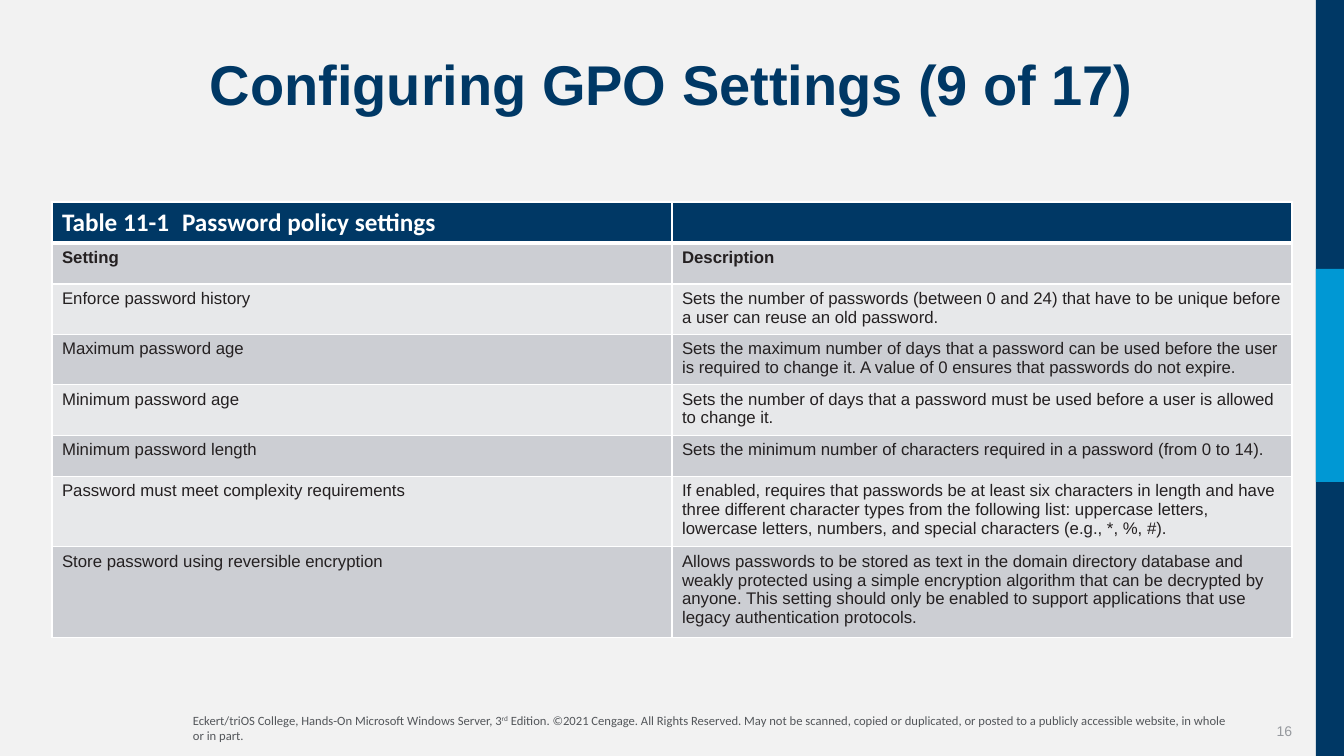
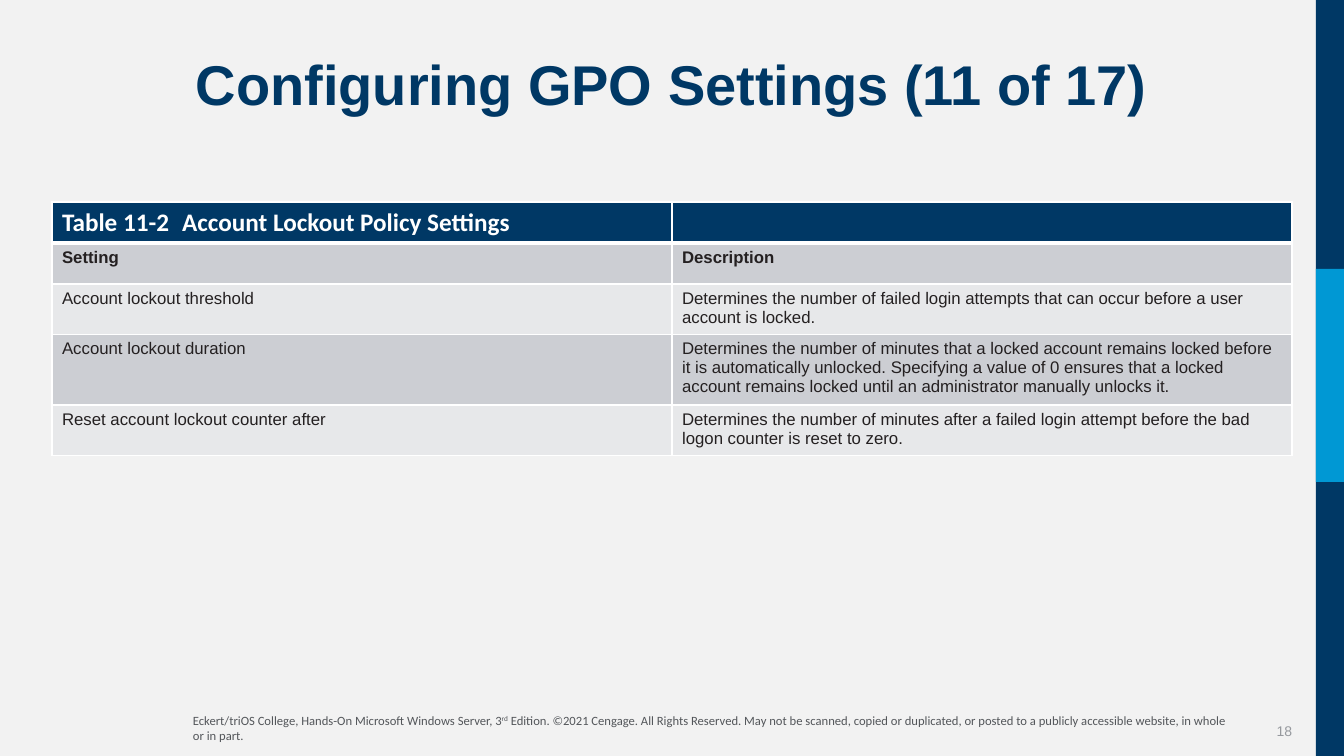
from lxml.etree import SubElement
from pptx import Presentation
from pptx.dml.color import RGBColor
from pptx.enum.shapes import MSO_SHAPE
from pptx.enum.text import MSO_ANCHOR, PP_ALIGN
from pptx.oxml.ns import qn
from pptx.util import Emu, Pt

EMU_PER_PX = 914400 / 100.8
SLIDE_WIDTH, SLIDE_HEIGHT = 1344, 756

BACKGROUND = RGBColor(0xF2, 0xF2, 0xF2)
NAVY = RGBColor(0x00, 0x38, 0x65)
SKY = RGBColor(0x00, 0x98, 0xD4)
WHITE = RGBColor(0xFF, 0xFF, 0xFF)
INK = RGBColor(0x24, 0x20, 0x21)
FOOTER_GRAY = RGBColor(0x53, 0x56, 0x5A)
NUMBER_GRAY = RGBColor(0x96, 0x99, 0x9E)
ROW_FILLS = (RGBColor(0xCC, 0xCE, 0xD3), RGBColor(0xE7, 0xE8, 0xEA))

TITLE = {"name": "Arial", "size": Pt(40), "bold": True, "color": NAVY}
CAPTION = {"name": "Calibri", "size": Pt(18), "bold": True, "color": WHITE}
BODY = {"name": "Arial", "size": Pt(12), "bold": False, "color": INK}
HEADING = {**BODY, "bold": True}
FOOTER = {"name": "Calibri", "size": Pt(9), "color": FOOTER_GRAY}
NUMBER = {"name": "Arial", "size": Pt(10), "color": NUMBER_GRAY}

BAR_LEFT, BAR_WIDTH = 1316, 28
TABLE_LEFT, TABLE_TOP = 52, 202
COLUMN_WIDTH, ROW_HEIGHT = 620, 41
CAPTION_TAB = 120
THIN, THICK = Pt(1), Pt(3)

FOOTER_RUNS = (
    ("Eckert/triOS College, Hands-On Microsoft Windows Server, 3", False),
    ("rd", True),
    ("\u00a0Edition. ©2021 Cengage. All Rights Reserved. May not be scanned, copied or "
     "duplicated, or posted to a publicly accessible website, in whole or in part.", False),
)

PASSWORD_POLICY = (
    ("Enforce password history",
     "Sets the number of passwords (between 0 and 24) that have to be unique before a user "
     "can reuse an old password."),
    ("Maximum password age",
     "Sets the maximum number of days that a password can be used before the user is required "
     "to change it. A value of 0 ensures that passwords do not expire."),
    ("Minimum password age",
     "Sets the number of days that a password must be used before a user is allowed to "
     "change it."),
    ("Minimum password length",
     "Sets the minimum number of characters required in a password (from 0 to 14)."),
    ("Password must meet complexity requirements",
     "If enabled, requires that passwords be at least six characters in length and have three "
     "different character types from the following list: uppercase letters, lowercase letters, "
     "numbers, and special characters (e.g., *, %, #)."),
    ("Store password using reversible encryption",
     "Allows passwords to be stored as text in the domain directory database and weakly "
     "protected using a simple encryption algorithm that can be decrypted by anyone. This "
     "setting should only be enabled to support applications that use legacy authentication "
     "protocols."),
)

LOCKOUT_POLICY = (
    ("Account lockout threshold",
     "Determines the number of failed login attempts that can occur before a user account is "
     "locked."),
    ("Account lockout duration",
     "Determines the number of minutes that a locked account remains locked before it is "
     "automatically unlocked. Specifying a value of 0 ensures that a locked account remains "
     "locked until an administrator manually unlocks it."),
    ("Reset account lockout counter after",
     "Determines the number of minutes after a failed login attempt before the bad logon "
     "counter is reset to zero."),
)


def px(*lengths):
    return [Emu(round(length * EMU_PER_PX)) for length in lengths]


def add_run(paragraph, text, style, superscript=False):
    run = paragraph.add_run()
    run.text = text
    for name, value in style.items():
        if name == "color":
            run.font.color.rgb = value
        else:
            setattr(run.font, name, value)
    if superscript:
        run._r.get_or_add_rPr().set("baseline", "30000")


def add_tab_stop(paragraph, position):
    tabs = SubElement(paragraph._p.get_or_add_pPr(), qn("a:tabLst"))
    SubElement(tabs, qn("a:tab"), pos=str(px(position)[0]), algn="l")


def set_borders(cell, top, bottom):
    properties = cell._tc.get_or_add_tcPr()
    for side, width in (("L", THIN), ("R", THIN), ("T", top), ("B", bottom)):
        line = SubElement(properties, qn(f"a:ln{side}"), w=str(width))
        fill = SubElement(line, qn("a:solidFill"))
        SubElement(fill, qn("a:srgbClr"), val=str(WHITE))


class Deck:
    def __init__(self):
        self.presentation = Presentation()
        self.presentation.slide_width, self.presentation.slide_height = px(
            SLIDE_WIDTH, SLIDE_HEIGHT)
        self.slide = None

    def add_slide(self, title, number):
        """Start a slide with its background, footer, side bar and title."""
        self.slide = self.presentation.slides.add_slide(self.presentation.slide_layouts[6])
        fill = self.slide.background.fill
        fill.solid()
        fill.fore_color.rgb = BACKGROUND
        paragraph = self.text_box(1222, 711, 80, 40, MSO_ANCHOR.MIDDLE)
        paragraph.alignment = PP_ALIGN.RIGHT
        add_run(paragraph, str(number), NUMBER)
        paragraph = self.text_box(183, 708, 1059, 40)
        for text, superscript in FOOTER_RUNS:
            add_run(paragraph, text, FOOTER, superscript)
        self.bar(0, SLIDE_HEIGHT, NAVY)
        self.bar(269, 213, SKY)
        paragraph = self.text_box(52, 52, 1239, 134)
        paragraph.alignment = PP_ALIGN.CENTER
        paragraph.line_spacing = 0.9
        add_run(paragraph, title, TITLE)

    def text_box(self, left, top, width, height, anchor=MSO_ANCHOR.TOP):
        """Add a wrapping text box and return its first paragraph."""
        frame = self.slide.shapes.add_textbox(*px(left, top, width, height)).text_frame
        frame.word_wrap = True
        frame.vertical_anchor = anchor
        return frame.paragraphs[0]

    def bar(self, top, height, color):
        shape = self.slide.shapes.add_shape(
            MSO_SHAPE.RECTANGLE, *px(BAR_LEFT, top, BAR_WIDTH, height))
        shape.shadow.inherit = False
        shape.fill.solid()
        shape.fill.fore_color.rgb = color
        shape.line.fill.background()

    def table(self, label, caption, settings):
        rows = ((f"{label}\t{caption}", ""), ("Setting", "Description"), *settings)
        table = self.slide.shapes.add_table(
            len(rows), 2, *px(TABLE_LEFT, TABLE_TOP, 2 * COLUMN_WIDTH,
                              len(rows) * ROW_HEIGHT)).table
        table.first_row = table.horz_banding = False
        for row, texts in enumerate(rows):
            style = (CAPTION, HEADING)[row] if row < 2 else BODY
            color = ROW_FILLS[(row - 1) % 2] if row else NAVY
            for column, text in enumerate(texts):
                cell = table.cell(row, column)
                set_borders(cell, THICK if row == 1 else THIN, THICK if row == 0 else THIN)
                cell.fill.solid()
                cell.fill.fore_color.rgb = color
                if text:
                    paragraph = cell.text_frame.paragraphs[0]
                    if row == 0:
                        add_tab_stop(paragraph, CAPTION_TAB)
                    add_run(paragraph, text, style)


def main():
    deck = Deck()
    deck.add_slide("Configuring GPO Settings (9 of 17)", 16)
    deck.table("Table 11-1", "Password policy settings", PASSWORD_POLICY)
    deck.add_slide("Configuring GPO Settings (11 of 17)", 18)
    deck.table("Table 11-2", "Account Lockout Policy Settings", LOCKOUT_POLICY)
    deck.presentation.save("out.pptx")


if __name__ == "__main__":
    main()
